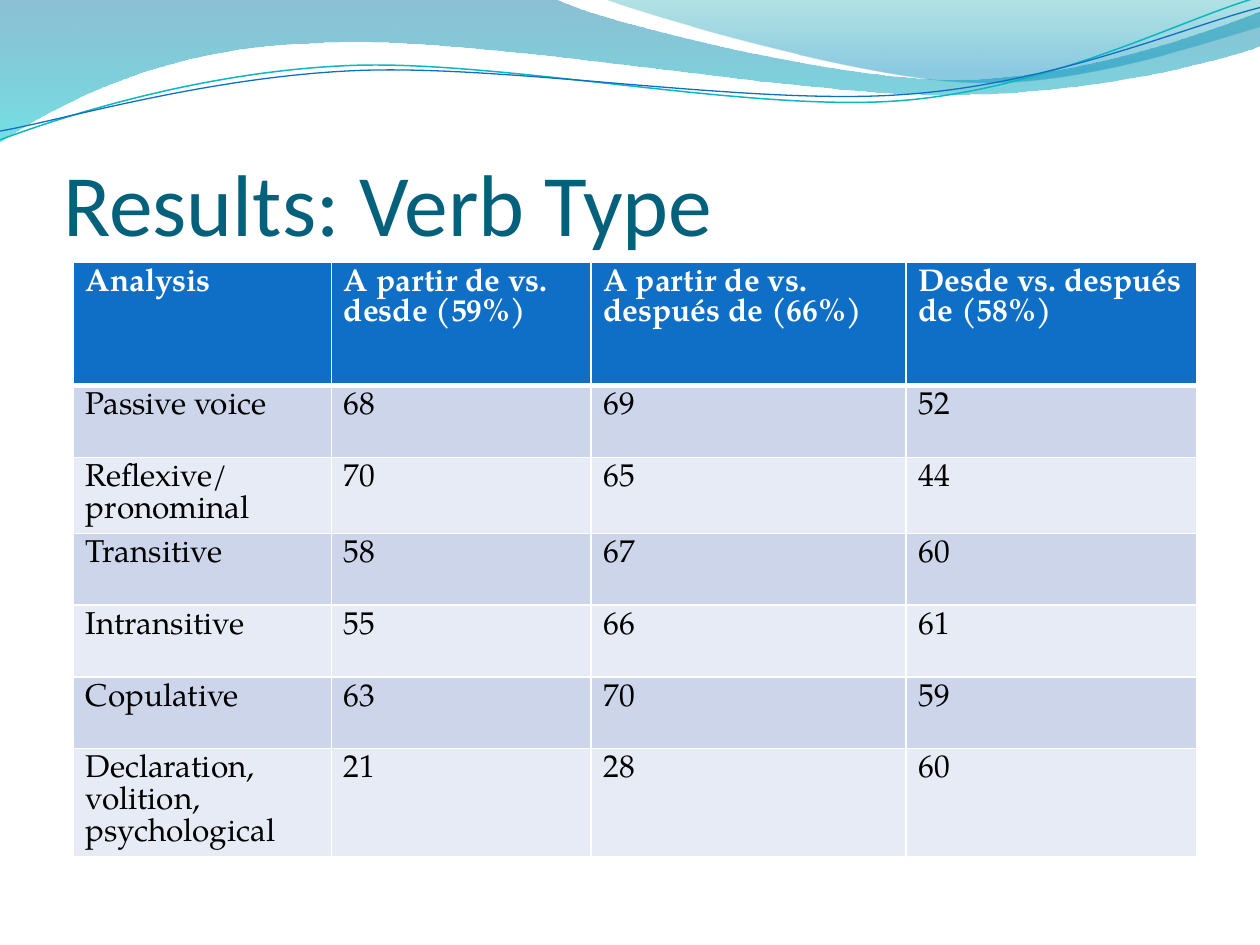
from math import cos, radians, sin

from lxml.etree import SubElement
from pptx import Presentation
from pptx.dml.color import RGBColor
from pptx.enum.text import MSO_ANCHOR, MSO_AUTO_SIZE, PP_ALIGN
from pptx.oxml import parse_xml
from pptx.oxml.ns import nsdecls, qn
from pptx.util import Inches, Pt

WHITE = RGBColor(0xFF, 0xFF, 0xFF)
BLACK = RGBColor(0x00, 0x00, 0x00)
TITLE_TEAL = RGBColor(0x04, 0x61, 0x7B)
BLUE = RGBColor(0x0F, 0x6F, 0xC6)
TURQUOISE = RGBColor(0x0A, 0xB8, 0xBF)
DEEP_BLUE = RGBColor(0x00, 0x74, 0xA1)
CYAN = RGBColor(0x00, 0xC6, 0xCF)
SEA_GREEN = RGBColor(0x00, 0xA1, 0xA9)
SKY_BLUE = RGBColor(0x00, 0x8B, 0xBF)
BANDS = (RGBColor(0xCC, 0xD5, 0xEA), RGBColor(0xE7, 0xEB, 0xF5))

SLIDE_WIDTH, SLIDE_HEIGHT = Inches(10), Inches(7.5)
GRID_COLUMNS, GRID_ROWS = 10, 7.5
LINE_TILT = 2.7
LINE_CENTER = (4.99, 0.58)

BROAD_WAVE = [
    (0, 0), (4.4, -0.01),
    (4.76, 0.17, 6.64, 0.63, 7.58, 0.63),
    (8.53, 0.63, 9.58, 0.26, 10, 0.09),
    (10.01, 0.36),
    (9.83, 0.44, 8.7, 0.76, 7.46, 0.75),
    (6.22, 0.75, 3.82, 0.28, 2.57, 0.34),
    (1.29, 0.36, 0.46, 0.83, -0.01, 1.13),
    (0, 0),
]
RIGHT_WAVE = [
    (4.79, -0.01),
    (5.09, 0.11, 6.82, 0.62, 7.69, 0.65),
    (8.56, 0.69, 9.61, 0.32, 10, 0.21),
    (10, 0), (4.79, -0.01),
]
TURQUOISE_LINE = [
    (0, 1.11),
    (0.48, 0.93, 1.58, 0.57, 2.77, 0.52),
    (3.95, 0.47, 5.93, 0.89, 7.13, 0.8),
    (8.33, 0.71, 9.38, 0.15, 9.98, -0.02),
]
BLUE_LINE = [
    (0, 1.04),
    (0.47, 0.96, 1.64, 0.61, 2.83, 0.56),
    (4.03, 0.51, 5.97, 0.84, 7.17, 0.75),
    (8.36, 0.67, 9.41, 0.21, 10, 0.06),
]

RESULTS = [
    ("Analysis", "A partir de vs. desde (59%)",
     "A partir de vs. después de (66%)", "Desde vs. después de (58%)"),
    ("Passive voice", "68", "69", "52"),
    ("Reflexive/pronominal", "70", "65", "44"),
    ("Transitive", "58", "67", "60"),
    ("Intransitive", "55", "66", "61"),
    ("Copulative", "63", "70", "59"),
    ("Declaration, volition, psychological", "21", "28", "60"),
]
COLUMN_WIDTHS = (2.05, 2.06, 2.5, 2.31)
ROW_HEIGHTS = (0.98,) + (0.57,) * 6


def turn(segment, degrees):
    cosine, sine = cos(radians(degrees)), sin(radians(degrees))
    center_x, center_y = LINE_CENTER
    turned = []
    for x, y in zip(segment[::2], segment[1::2]):
        x, y = x - center_x, y - center_y
        turned += [center_x + x * cosine - y * sine, center_y + x * sine + y * cosine]
    return tuple(turned)


class SlideBuilder:
    title_font, title_size = "Calibri", Pt(50)
    table_font, table_size = "TeX Gyre Pagella", Pt(18)

    def __init__(self, presentation):
        self.slide = presentation.slides.add_slide(presentation.slide_layouts[5])

    def across(self, columns):
        return round(SLIDE_WIDTH * columns / GRID_COLUMNS)

    def down(self, rows):
        return round(SLIDE_HEIGHT * rows / GRID_ROWS)

    def box(self, left, top, width, height):
        return self.across(left), self.down(top), self.across(width), self.down(height)

    def curve(self, segments, close):
        points = [(self.across(x), self.down(y)) for segment in segments
                  for x, y in zip(segment[::2], segment[1::2])]
        builder = self.slide.shapes.build_freeform(*points[0])
        builder.add_line_segments(points[1:], close=close)
        shape = builder.convert_to_shape()
        shape.shadow.inherit = False
        lines = iter(list(shape.element.iter(qn("a:lnTo"))))
        for segment in segments[1:]:
            line = next(lines)
            if len(segment) == 6:
                line.tag_name = None
                bezier = parse_xml(f'<a:cubicBezTo {nsdecls("a")}/>')
                line.addprevious(bezier)
                for piece in (line, next(lines), next(lines)):
                    bezier.append(piece[0])
                    piece.getparent().remove(piece)
        return shape

    def wave(self, segments, stops):
        shape = self.curve(segments, True)
        shape.line.fill.background()
        shape.fill.gradient()
        shape.fill.gradient_angle = 270
        for stop, (position, color, opacity) in zip(shape.fill.gradient_stops, stops):
            stop.position = position
            stop.color.rgb = color
        for element, (_, _, opacity) in zip(shape.element.iter(qn("a:srgbClr")), stops):
            SubElement(element, qn("a:alpha"), val=str(opacity * 1000))

    def wave_line(self, segments, color, width):
        shape = self.curve([turn(segment, LINE_TILT) for segment in segments], False)
        shape.rotation = 360 - LINE_TILT
        shape.fill.background()
        shape.line.color.rgb = color
        shape.line.width = Pt(width)

    def title(self, text, *area):
        title = self.slide.shapes.title
        title.element.getparent().append(title.element)
        title.left, title.top, title.width, title.height = self.box(*area)
        frame = title.text_frame
        frame.text = text
        frame.word_wrap = True
        frame.auto_size = MSO_AUTO_SIZE.NONE
        frame.vertical_anchor = MSO_ANCHOR.BOTTOM
        frame.margin_left = frame.margin_right = frame.margin_bottom = 0
        frame.margin_top = Inches(0.05)
        paragraph = frame.paragraphs[0]
        paragraph.alignment = PP_ALIGN.LEFT
        self.format_font(paragraph.font, self.title_font, self.title_size, TITLE_TEAL)

    def format_font(self, font, name, size, color, bold=False):
        font.name, font.size, font.bold = name, size, bold
        font.color.rgb = color

    def border(self, cell, bottom_width):
        properties = cell._tc.get_or_add_tcPr()
        widths = {"lnL": 1, "lnR": 1, "lnT": 1, "lnB": bottom_width}
        for index, (side, width) in enumerate(widths.items()):
            properties.insert(index, parse_xml(
                f'<a:{side} {nsdecls("a")} w="{Pt(width)}"><a:solidFill>'
                f'<a:srgbClr val="{WHITE}"/></a:solidFill></a:{side}>'))

    def table(self, rows, left, top, widths, heights):
        table = self.slide.shapes.add_table(
            len(rows), len(widths),
            *self.box(left, top, sum(widths), sum(heights))).table
        for column, width in zip(table.columns, widths):
            column.width = self.across(width)
        for row_index, (row, values) in enumerate(zip(table.rows, rows)):
            header = row_index == 0
            row.height = self.down(heights[row_index])
            for cell, value in zip(row.cells, values):
                cell.text = value
                cell.fill.solid()
                cell.fill.fore_color.rgb = BLUE if header else BANDS[(row_index - 1) % 2]
                self.border(cell, 3 if header else 1)
                self.format_font(cell.text_frame.paragraphs[0].font, self.table_font,
                                 self.table_size, WHITE if header else BLACK, header)


def main():
    presentation = Presentation()
    presentation.slide_width, presentation.slide_height = SLIDE_WIDTH, SLIDE_HEIGHT
    builder = SlideBuilder(presentation)
    builder.wave(BROAD_WAVE, [(0, DEEP_BLUE, 45), (1, CYAN, 55)])
    builder.wave(RIGHT_WAVE, [(0, SEA_GREEN, 30), (0.8, SKY_BLUE, 45)])
    builder.wave_line(TURQUOISE_LINE, TURQUOISE, 0.85)
    builder.wave_line(BLUE_LINE, BLUE, 0.75)
    builder.title("Results: Verb Type", 0.5, 0.77, 9, 1.25)
    builder.table(RESULTS, 0.58, 2.08, COLUMN_WIDTHS, ROW_HEIGHTS)
    presentation.save("out.pptx")


if __name__ == "__main__":
    main()
